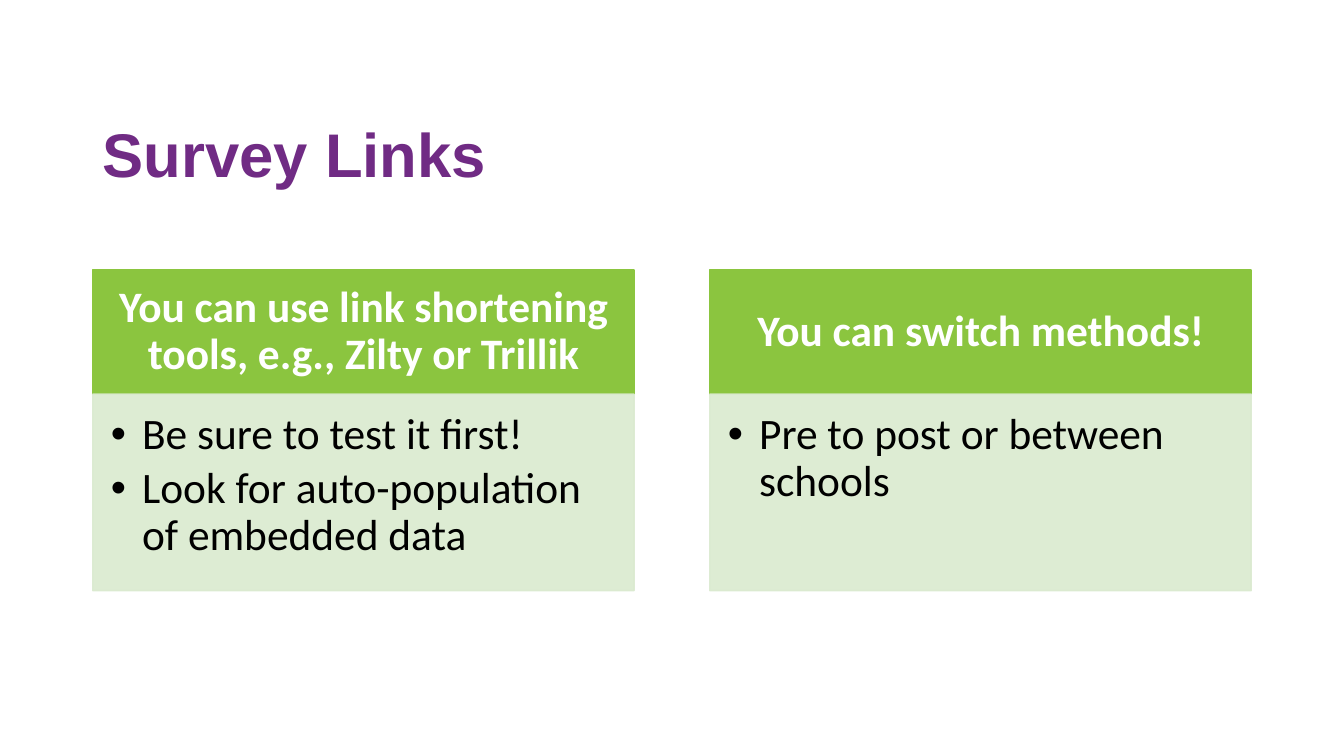
from lxml import etree
from pptx import Presentation
from pptx import util as u
from pptx.dml.color import RGBColor
from pptx.enum import shapes, text
from pptx.oxml.ns import qn

PURPLE = RGBColor(0x70, 0x2B, 0x84)
GREEN = RGBColor(0x8B, 0xC5, 0x3F)
PALE_GREEN = RGBColor(0xDA, 0xEA, 0xCF)
WHITE = RGBColor(0xFF, 0xFF, 0xFF)
BLACK = RGBColor(0, 0, 0)

LEFT, COLUMN_WIDTH, COLUMN_STEP = 0.92, 5.37, 6.12
HEADING_TOP, HEADING_HEIGHT, BODY_HEIGHT = 2.68, 1.23, 1.95

COLUMNS = [
    ("You can use link shortening tools, e.g., Zilty or Trillik",
     ["Be sure to test it first!", "Look for auto-population of embedded data"]),
    ("You can switch methods!", ["Pre to post or between schools"]),
]


def add_panel(left, top, height, color, margins, anchor):
    shape = slide.shapes.add_shape(
        shapes.MSO_SHAPE.RECTANGLE, u.Inches(left), u.Inches(top),
        u.Inches(COLUMN_WIDTH), u.Inches(height))
    shape.shadow.inherit = False
    shape.fill.solid()
    shape.fill.fore_color.rgb = color
    shape.line.color.rgb = color
    shape.line.width = u.Pt(1)
    frame = shape.text_frame
    frame.word_wrap = True
    frame.vertical_anchor = anchor
    frame.margin_left, frame.margin_top, frame.margin_right, frame.margin_bottom = map(u.Inches, margins)
    return shape


def format_paragraph(paragraph, alignment, font_name, size, color, bold):
    paragraph.alignment = alignment
    paragraph.line_spacing = 0.9
    font = paragraph.runs[0].font
    font.name = font_name
    font.size = u.Pt(size)
    font.color.rgb = color
    font.bold = bold


presentation = Presentation()
presentation.slide_width = u.Inches(13.33)
presentation.slide_height = u.Inches(7.5)
slide = presentation.slides.add_slide(presentation.slide_layouts[6])

title = slide.shapes.add_textbox(u.Inches(LEFT), u.Inches(0.84), u.Inches(11.5), u.Inches(1.45))
title.text_frame.word_wrap = True
title.text_frame.vertical_anchor = text.MSO_ANCHOR.MIDDLE
title.text_frame.text = "Survey Links"
format_paragraph(title.text_frame.paragraphs[0], text.PP_ALIGN.LEFT, "Arial", 44, PURPLE, True)

for index, (heading_text, points) in enumerate(COLUMNS):
    left = LEFT + index * COLUMN_STEP
    heading = add_panel(left, HEADING_TOP, HEADING_HEIGHT, GREEN,
                        (0.24, 0.14, 0.24, 0.14), text.MSO_ANCHOR.MIDDLE)
    heading.text_frame.text = heading_text
    format_paragraph(heading.text_frame.paragraphs[0], text.PP_ALIGN.CENTER, "Calibri", 31, WHITE, True)

    body = add_panel(left, HEADING_TOP + HEADING_HEIGHT, BODY_HEIGHT, PALE_GREEN,
                     (0.18, 0.18, 0.24, 0.27), text.MSO_ANCHOR.TOP)
    for color_element in body._element.spPr.iter(qn("a:srgbClr")):
        etree.SubElement(color_element, qn("a:alpha"), val="90000")
    body.text_frame.text = "\n".join(points)
    for paragraph in body.text_frame.paragraphs:
        paragraph.space_after = u.Pt(5)
        properties = paragraph._p.get_or_add_pPr()
        properties.set("marL", str(u.Inches(0.31)))
        properties.set("indent", str(u.Inches(-0.31)))
        etree.SubElement(properties, qn("a:buFont"), typeface="Arial")
        etree.SubElement(properties, qn("a:buChar"), char="•")
        format_paragraph(paragraph, text.PP_ALIGN.LEFT, "Calibri", 31, BLACK, False)

presentation.save("out.pptx")
